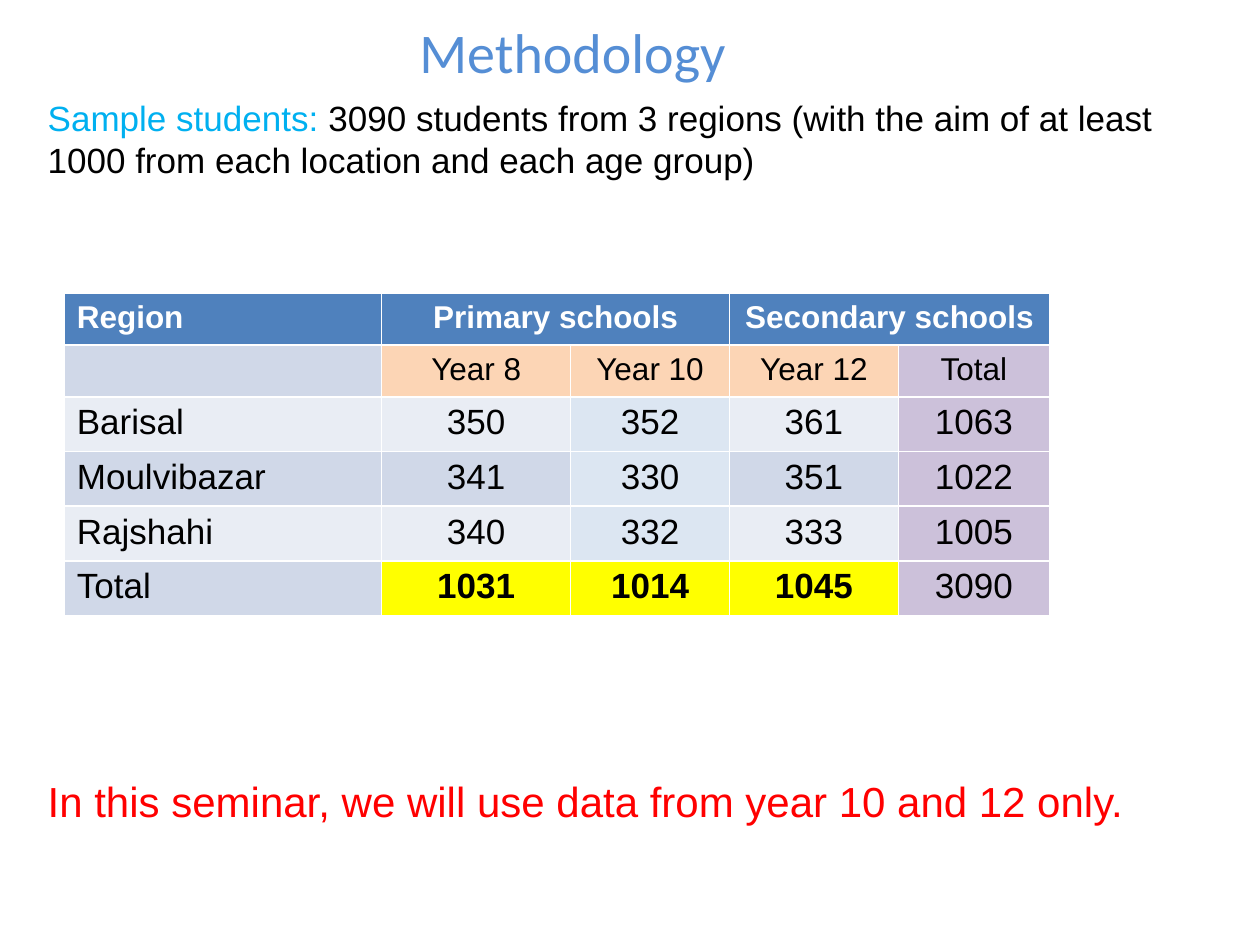
from pptx import Presentation
from pptx.dml.color import RGBColor
from pptx.enum.text import MSO_ANCHOR, MSO_AUTO_SIZE, PP_ALIGN
from pptx.util import Inches, Pt

BOTTOM = MSO_ANCHOR.BOTTOM
FIXED = MSO_AUTO_SIZE.NONE
LEFT, CENTER = PP_ALIGN.LEFT, PP_ALIGN.CENTER

BLACK = RGBColor(0x00, 0x00, 0x00)
WHITE = RGBColor(0xFF, 0xFF, 0xFF)
RED = RGBColor(0xFF, 0x00, 0x00)
SKY = RGBColor(0x00, 0xB0, 0xF0)
AZURE = RGBColor(0x55, 0x8E, 0xD5)
BLUE = RGBColor(0x4F, 0x81, 0xBD)
PEACH = RGBColor(0xFC, 0xD5, 0xB5)
LILAC = RGBColor(0xCC, 0xC1, 0xDA)
ICE = RGBColor(0xDC, 0xE6, 0xF2)
YELLOW = RGBColor(0xFF, 0xFF, 0x00)
BANDS = (RGBColor(0xE9, 0xED, 0xF4), RGBColor(0xD0, 0xD8, 0xE8))

ROWS = [
    ("Region", "Primary schools", "", "Secondary schools", ""),
    ("", "Year 8", "Year 10", "Year 12", "Total"),
    ("Barisal", "350", "352", "361", "1063"),
    ("Moulvibazar", "341", "330", "351", "1022"),
    ("Rajshahi", "340", "332", "333", "1005"),
    ("Total", "1031", "1014", "1045", "3090"),
]
WIDTHS = (2.52, 1.5, 1.26, 1.34, 1.2)
HEIGHTS = (0.41, 0.41, 0.43, 0.43, 0.43, 0.43)
LAST_ROW, LAST_COL = len(ROWS) - 1, len(WIDTHS) - 1


def write(para, text, size=20, color=BLACK, bold=False, font="Arial", align=LEFT):
    para.alignment = align
    run = para.add_run()
    run.text = text
    run.font.name = font
    run.font.size = Pt(size)
    run.font.bold = bold
    run.font.color.rgb = color


def add_title(slide, box):
    title = slide.shapes.title
    title.left, title.top, title.width, title.height = map(Inches, box)
    frame = title.text_frame
    frame.auto_size = FIXED
    frame.vertical_anchor = BOTTOM
    write(frame.paragraphs[0], "Methodology ", size=32, color=AZURE,
          font="Calibri", align=CENTER)


def add_body(slide, box):
    """Place the sample above the table and the remark below it."""
    frame = slide.shapes.add_textbox(*map(Inches, box)).text_frame
    frame.word_wrap = True
    sample = frame.paragraphs[0]
    write(sample, "Sample students: ", color=SKY)
    write(sample, "3090 students from 3 regions (with the aim of at least "
                  "1000 from each location and each age group)")
    remark = frame.add_paragraph()
    remark.space_before = Pt(340)
    write(remark, "In this seminar, we will use data from year 10 and 12 only.",
          size=24, color=RED)


def cell_fill(row, col):
    if row == 0:
        return BLUE
    if col == LAST_COL:
        return LILAC
    if col > 0 and row == 1:
        return PEACH
    if col > 0 and row == LAST_ROW:
        return YELLOW
    if col == 2:
        return ICE
    return BANDS[row % 2]


def add_counts(slide, box):
    frame = slide.shapes.add_table(len(ROWS), len(WIDTHS), *map(Inches, box))
    table = frame.table
    for column, width in zip(table.columns, WIDTHS):
        column.width = Inches(width)
    for line, height in zip(table.rows, HEIGHTS):
        line.height = Inches(height)
    for col in (1, 3):
        table.cell(0, col).merge(table.cell(0, col + 1))
    for row, texts in enumerate(ROWS):
        head = row == 0
        for col, text in enumerate(texts):
            cell = table.cell(row, col)
            cell.fill.solid()
            cell.fill.fore_color.rgb = cell_fill(row, col)
            if text:
                write(cell.text_frame.paragraphs[0], text,
                      size=18 if row < 2 else 20,
                      color=WHITE if head else BLACK,
                      bold=head or (row == LAST_ROW and 0 < col < LAST_COL),
                      align=CENTER if col else LEFT)


def main():
    deck = Presentation()
    deck.slide_width, deck.slide_height = Inches(10), Inches(7.5)
    slide = deck.slides.add_slide(deck.slide_layouts[5])
    add_title(slide, (0, -0.27, 9.19, 0.99))
    add_body(slide, (0.28, 0.72, 9.61, 6.23))
    add_counts(slide, (0.51, 2.33, sum(WIDTHS), sum(HEIGHTS)))
    deck.save("out.pptx")


if __name__ == "__main__":
    main()
